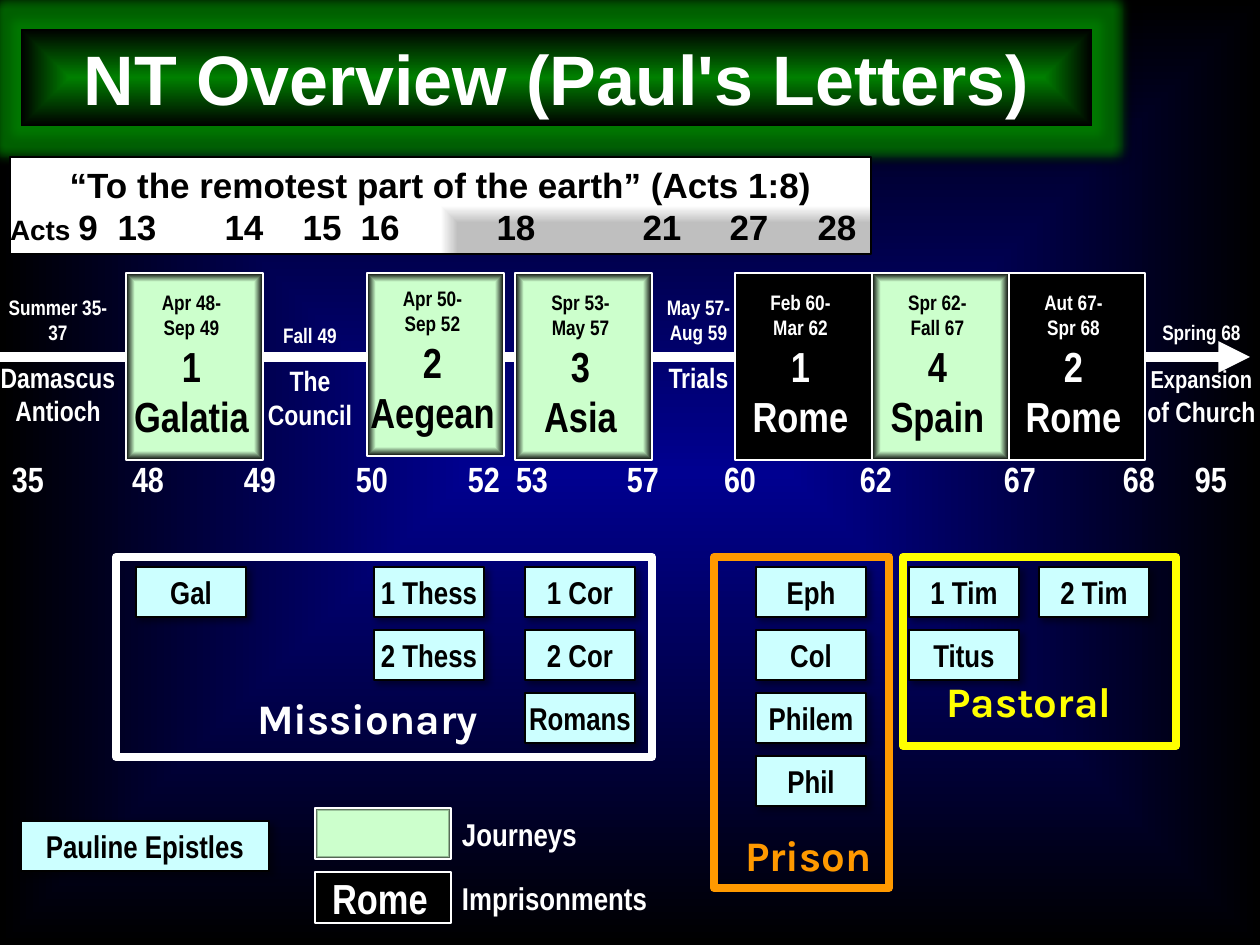
import dataclasses

import pptx
import pptx.dml.color
import pptx.enum.shapes
import pptx.enum.text
import pptx.oxml
import pptx.oxml.ns
import pptx.util

PX = 914400 / 126
ALIGN = pptx.enum.text.PP_ALIGN
ANCHOR = pptx.enum.text.MSO_ANCHOR


@dataclasses.dataclass(frozen=True)
class Theme:
    navy: str = "000090"
    black: str = "000000"
    white: str = "FFFFFF"
    green: str = "008000"
    mint: str = "CCFFCC"
    cyan: str = "CCFFFF"
    grey: str = "BFBFBF"
    orange: str = "FF9900"
    yellow: str = "FFFF00"
    wide: str = "Arial"
    narrow: str = "Arial Narrow"
    label: str = "Karla"
    title: int = 40
    heading: int = 24
    row: int = 20
    card: int = 18
    place: int = 16
    small: int = 14
    date: int = 12


T = Theme()
MINT_BEVEL = [(0, T.mint), (87, T.mint), (100, T.black)]


def px(n):
    return pptx.util.Emu(round(n * PX))


def rgb(color):
    return pptx.dml.color.RGBColor.from_string(color)


def xml(markup):
    tag_end = min(i for i in (markup.find(" "), markup.find(">")) if i > 0)
    return pptx.oxml.parse_xml(
        f"{markup[:tag_end]} {pptx.oxml.ns.nsdecls('a')}{markup[tag_end:]}")


def panel(slide, box, fill=None, line=None, width=1):
    shape = slide.shapes.add_shape(
        pptx.enum.shapes.MSO_SHAPE.RECTANGLE, *map(px, box))
    shape.shadow.inherit = False
    if fill:
        shape.fill.solid()
        shape.fill.fore_color.rgb = rgb(fill)
    else:
        shape.fill.background()
    if line:
        shape.line.color.rgb = rgb(line)
        shape.line.width = pptx.util.Pt(width)
    else:
        shape.line.fill.background()
    return shape


def shade(shape, stops, path="shape", focus=(50, 50, 50, 50)):
    """Path gradient that spreads from the focus rectangle."""
    marks = "".join(f'<a:gs pos="{at * 1000}"><a:srgbClr val="{color}"/></a:gs>'
                    for at, color in stops)
    sides = " ".join(f'{side}="{n * 1000}"' for side, n in zip("ltrb", focus))
    gradient = xml(f'<a:gradFill rotWithShape="1"><a:gsLst>{marks}</a:gsLst>'
                   f'<a:path path="{path}"><a:fillToRect {sides}/></a:path></a:gradFill>')
    props = shape._element.spPr
    props.replace(props.find(pptx.oxml.ns.qn("a:noFill")), gradient)


def add_effect(shape, kind, color, alpha, attributes):
    effects = shape._element.spPr.find(pptx.oxml.ns.qn("a:effectLst"))
    effects.append(xml(f'<a:{kind} {attributes}><a:srgbClr val="{color}">'
                       f'<a:alpha val="{alpha * 1000}"/></a:srgbClr></a:{kind}>'))


def write(shape, paragraphs, color, font, align=ALIGN.CENTER,
          anchor=ANCHOR.TOP, insets=(0, 0, 0, 0)):
    """Each paragraph is (space before, [(text, size), ...]); a newline breaks the line."""
    frame = shape.text_frame
    frame.word_wrap = True
    frame.vertical_anchor = anchor
    frame.margin_left, frame.margin_top, frame.margin_right, frame.margin_bottom = map(px, insets)
    for i, (before, runs) in enumerate(paragraphs):
        paragraph = frame.paragraphs[0] if i == 0 else frame.add_paragraph()
        paragraph.alignment = align
        paragraph.space_before = pptx.util.Pt(before)
        for text, size in runs:
            for j, part in enumerate(text.split("\n")):
                if j:
                    paragraph.add_line_break()
                run = paragraph.add_run()
                run.text = part
                run.font.size = pptx.util.Pt(size)
                run.font.name = font
                run.font.bold = True
                run.font.color.rgb = rgb(color)
    return frame


def note(slide, box, paragraphs, color=T.white, font=T.narrow, **layout):
    return write(slide.shapes.add_textbox(*map(px, box)), paragraphs, color, font, **layout)


def set_tabs(paragraph, centers):
    paragraph.alignment = ALIGN.LEFT
    stops = "".join(f'<a:tab pos="{px(x)}" algn="ctr"/>' for x in centers)
    paragraph._p.get_or_add_pPr().append(xml(f"<a:tabLst>{stops}</a:tabLst>"))


def title_bar(slide, box):
    bar = panel(slide, box)
    shade(bar, [(0, T.green), (100, T.black)])
    add_effect(bar, "glow", T.green, 75, 'rad="152400"')
    add_effect(bar, "outerShdw", T.black, 75, 'blurRad="63500" dist="17780" dir="2700000"')
    write(bar, [(0, [("NT Overview (Paul's Letters)", T.title)])],
          T.white, T.wide, anchor=ANCHOR.MIDDLE)


def acts_band(slide, box):
    band = panel(slide, box, line=T.black)
    shade(band, [(64, T.grey), (100, T.white)], "rect", (100, 100, 0, 0))
    chapters = "9\t13\t14\t15\t16\t18\t21\t27\t28"
    frame = write(band, [(0, [("“To the remotest part of the earth” (Acts 1:8)", T.row)]),
                         (0, [("Acts ", T.place), (chapters, T.row)])],
                  T.black, T.wide, insets=(0, 6, 0, 6))
    set_tabs(frame.paragraphs[1], [127, 234, 312, 370, 506, 652, 739, 827])


def journey(slide, box, text):
    stop = panel(slide, box, line=T.white, width=1.5)
    shade(stop, MINT_BEVEL)
    stop_text(stop, text, T.black)


def prison_term(slide, box, text):
    stop_text(panel(slide, box, T.black, T.white), text, T.white)


def stop_text(stop, text, color):
    dates, place = text
    write(stop, [(0, [(dates, T.date)]), (0, [(place, T.heading)])], color, T.narrow,
          anchor=ANCHOR.BOTTOM, insets=(0, 0, 6, 19))


def timeline(slide, box):
    left, top, width, _ = box
    # Stages between the journeys
    for x, y, w, dates, place in [
            (252, 50, 116, "Fall 49", [("The\nCouncil", T.place)]),
            (651, 21, 95, "May 57-\nAug 59", [("Trials", T.place)]),
            (1143, 47, 117, "Spring 68", [("Expansion", T.small), (" of Church", T.place)]),
            (-10, 21, 136, "Summer 35-\n37", [("Damascus\nAntioch", T.place)])]:
        note(slide, (left + x, top + y, w, 110), [(0, [(dates, T.date)]), (9, place)])
    # Time arrow
    axis = slide.shapes.add_connector(
        pptx.enum.shapes.MSO_CONNECTOR.STRAIGHT,
        px(left), px(top + 84), px(left + width - 10), px(top + 84))
    axis.line.color.rgb = rgb(T.white)
    axis.line.width = pptx.util.Pt(6)
    axis.line._get_or_add_ln().append(xml('<a:tailEnd type="triangle"/>'))
    axis._element.spPr.append(xml("<a:effectLst></a:effectLst>"))
    # Journeys and imprisonments
    for draw, x, h, *text in [
            (journey, 126, 187, "Apr 48-\nSep 49", "1\nGalatia"),
            (journey, 367, 183, "Apr 50-\nSep 52", "2\nAegean"),
            (journey, 515, 187, "Spr 53-\nMay 57", "3\nAsia"),
            (prison_term, 735, 187, "Feb 60-\nMar 62", "1\nRome"),
            (prison_term, 1008, 187, "Aut 67-\nSpr 68", "2\nRome"),
            (journey, 872, 187, "Spr 62-\nFall 67", "4\nSpain")]:
        draw(slide, (left + x, top, 137, h), text)
    # Years
    years = "35\t48\t49\t50\t52\t53\t57\t60\t62\t67\t68\t95"
    frame = note(slide, (left, top + 178, width, 55), [(0, [(years, T.row)])],
                 insets=(12, 6, 0, 6))
    set_tabs(frame.paragraphs[0],
             [136, 248, 360, 472, 520, 631, 728, 864, 1008, 1127, 1199])


def card(slide, box, text):
    epistle = panel(slide, box, T.cyan, T.black)
    add_effect(epistle, "outerShdw", T.black, 43, 'blurRad="50800" dist="38100" dir="2700000"')
    write(epistle, [(0, [(text, T.card)])], T.black, T.narrow, anchor=ANCHOR.MIDDLE)


def letter_group(slide, box, color, columns, name, name_box):
    left, top, _, _ = box
    for x, letters in columns:
        for row, letter in enumerate(letters):
            card(slide, (left + x, top + 10 + 63 * row, 110, 50), letter)
    panel(slide, box, line=color, width=4.5)
    x, y, w, h = name_box
    note(slide, (left + x, top + y, w, h), [(0, [(name, T.heading)])],
         color, T.label, insets=(0, 6, 0, 6))


def legend(slide, box):
    left, top, _, _ = box
    card(slide, (left, top + 13, 248, 50), "Pauline Epistles")
    shade(panel(slide, (left + 294, top, 136, 51), line=T.white, width=1.5), MINT_BEVEL)
    rome = panel(slide, (left + 294, top + 64, 136, 51), T.black, T.white)
    write(rome, [(0, [("Rome", T.heading)])], T.white, T.narrow,
          anchor=ANCHOR.BOTTOM, insets=(0, 0, 6, 0))
    for row, meaning in enumerate(["Journeys", "Imprisonments"]):
        note(slide, (left + 441, top + 7 + 64 * row, 220, 38),
             [(0, [(meaning, T.card)])], align=ALIGN.LEFT)


def main():
    deck = pptx.Presentation()
    deck.slide_width, deck.slide_height = px(1260), px(945)
    slide = deck.slides.add_slide(deck.slide_layouts[6])
    # Backdrop
    shade(panel(slide, (0, 0, 1260, 945)), [(0, T.navy), (100, T.black)])
    # Header
    title_bar(slide, (21, 29, 1071, 97))
    acts_band(slide, (10, 157, 861, 97))
    timeline(slide, (0, 273, 1260, 233))
    # Letters by kind
    letter_group(slide, (116, 557, 536, 200), T.white,
                 [(20, ["Gal"]), (258, ["1 Thess", "2 Thess"]),
                  (409, ["1 Cor", "2 Cor", "Romans"])],
                 "Missionary", (94, 130, 315, 64))
    letter_group(slide, (714, 557, 175, 331), T.orange,
                 [(42, ["Eph", "Col", "Philem", "Phil"])], "Prison", (0, 267, 189, 64))
    letter_group(slide, (903, 557, 273, 189), T.yellow,
                 [(6, ["1 Tim", "Titus"]), (136, ["2 Tim"])],
                 "Pastoral", (6, 113, 240, 64))
    legend(slide, (21, 808, 661, 115))
    deck.save("out.pptx")


if __name__ == "__main__":
    main()
